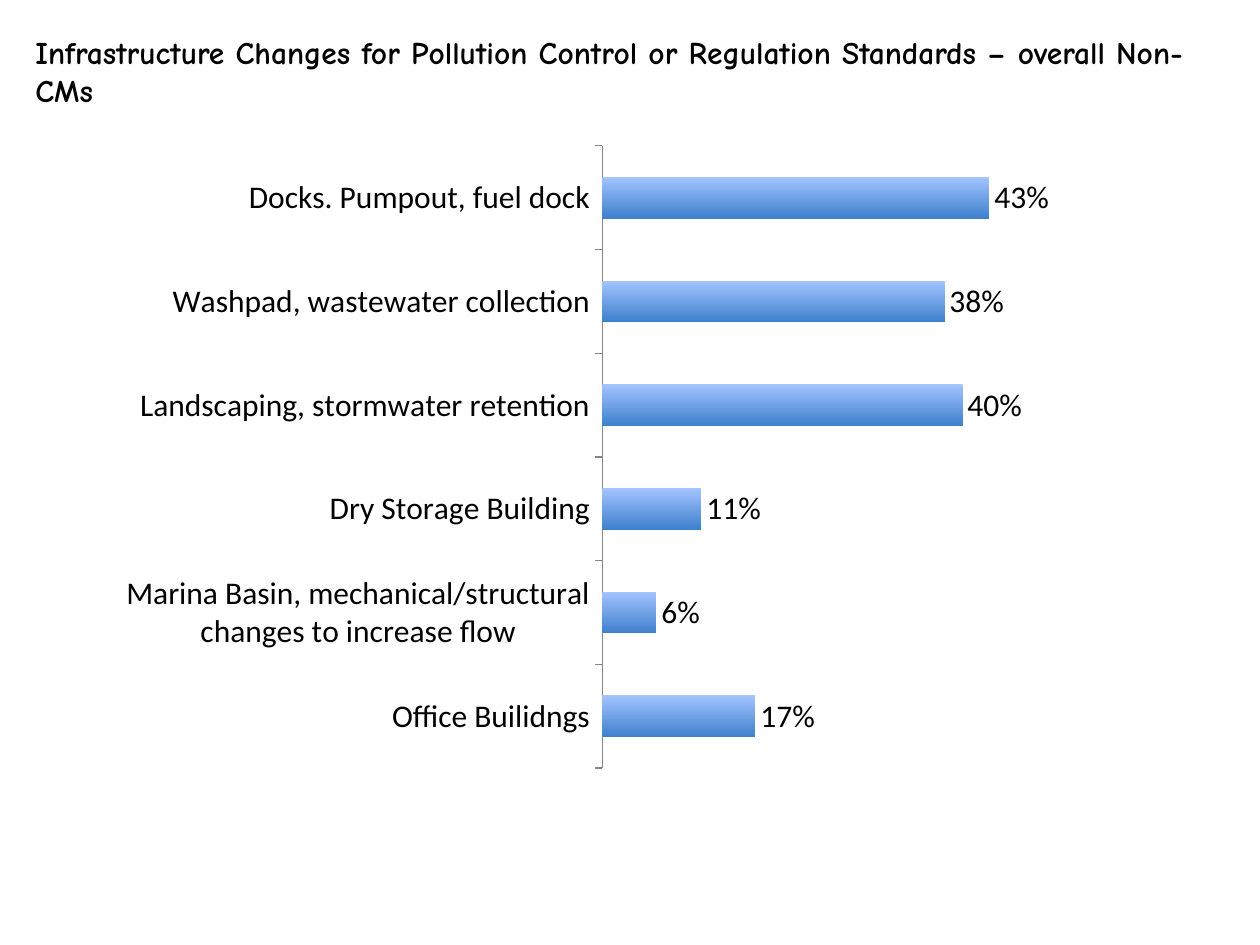
from lxml import etree
from pptx import Presentation
from pptx import util as u
from pptx.chart.data import CategoryChartData
from pptx.dml.color import RGBColor
from pptx.enum import chart as ch, text
from pptx.oxml.ns import qn

COLORS = {"text": "000000", "axis": "868686", "bar_top": "A3C4FF", "bar_bottom": "3F80CD"}
TITLE = ("Infrastructure Changes for Pollution Control or Regulation Standards "
         "– overall Non-CMs")
CHANGES = {
    "Office Builidngs": 0.17,
    "Marina Basin, mechanical/structural changes to increase flow": 0.06,
    "Dry Storage Building": 0.11,
    "Landscaping, stormwater retention": 0.40,
    "Washpad, wastewater collection": 0.38,
    "Docks. Pumpout, fuel dock": 0.43,
}
CHART_BOX = (0.85, 1.06, 7.65, 5.15)
PLOT_BOX = (4.78, 1.16, 3.57, 4.94)


def rgb(name):
    return RGBColor.from_string(COLORS[name])


def set_all(target, values):
    for key, value in values.items():
        setattr(target, key, value)


def set_font(font, name, bold=False):
    set_all(font, {"name": name, "size": u.Pt(18), "bold": bold})
    font.color.rgb = rgb("text")


def add_title(slide):
    title = slide.shapes.title
    set_all(title, {"left": u.Inches(0.18), "top": u.Inches(0.21),
                    "width": u.Inches(9.52), "height": u.Inches(0.71)})
    frame = title.text_frame
    frame.text = TITLE
    set_all(frame, {"word_wrap": True, "auto_size": text.MSO_AUTO_SIZE.NONE,
                    "vertical_anchor": text.MSO_ANCHOR.TOP})
    heading = frame.paragraphs[0]
    heading.alignment = text.PP_ALIGN.LEFT
    set_font(heading.runs[0].font, "Comic Neue", bold=True)


def place_plot(chart):
    """Fix the inner plot area, as fractions of the chart frame."""
    left, top, width, height = CHART_BOX
    x, y, w, h = PLOT_BOX
    plot_area = chart._chartSpace.chart.plotArea
    for old in plot_area.findall(qn("c:layout")):
        plot_area.remove(old)
    layout = etree.Element(qn("c:layout"))
    plot_area.insert(0, layout)
    manual = etree.SubElement(layout, qn("c:manualLayout"))
    settings = {"layoutTarget": "inner", "xMode": "edge", "yMode": "edge",
                "x": (x - left) / width, "y": (y - top) / height,
                "w": w / width, "h": h / height}
    for tag, value in settings.items():
        etree.SubElement(manual, qn(f"c:{tag}")).set(
            "val", value if isinstance(value, str) else f"{value:.3f}")


def format_axes(chart):
    set_all(chart.value_axis, {"visible": False, "has_major_gridlines": False,
                               "minimum_scale": 0, "maximum_scale": 0.5})
    set_all(chart.category_axis, {"has_major_gridlines": False,
                                  "major_tick_mark": ch.XL_TICK_MARK.OUTSIDE})
    axis_line = chart.category_axis.format.line
    axis_line.color.rgb = rgb("axis")
    axis_line.width = u.Pt(0.75)


def format_bars(plot):
    set_all(plot, {"gap_width": 150, "vary_by_categories": False, "has_data_labels": True})
    set_all(plot.data_labels, {"show_value": True, "number_format": "0%",
                               "number_format_is_linked": False,
                               "position": ch.XL_LABEL_POSITION.OUTSIDE_END})
    fill = plot.series[0].format.fill
    fill.gradient()
    fill.gradient_angle = 270
    for stop, name in zip(fill.gradient_stops, ("bar_top", "bar_bottom")):
        stop.color.rgb = rgb(name)


def add_bar_chart(slide):
    shares = CategoryChartData(number_format="0%")
    shares.categories = list(CHANGES)
    shares.add_series("Series 1", list(CHANGES.values()))
    chart = slide.shapes.add_chart(
        ch.XL_CHART_TYPE.BAR_CLUSTERED, *map(u.Inches, CHART_BOX), shares).chart
    set_all(chart, {"has_legend": False, "has_title": False})
    set_font(chart.font, "Calibri")
    format_axes(chart)
    format_bars(chart.plots[0])
    place_plot(chart)


def main():
    deck = Presentation()
    set_all(deck, {"slide_width": u.Inches(10), "slide_height": u.Inches(7.5)})
    slide = deck.slides.add_slide(deck.slide_layouts.get_by_name("Title Only"))
    add_title(slide)
    add_bar_chart(slide)
    deck.save("out.pptx")


if __name__ == "__main__":
    main()
